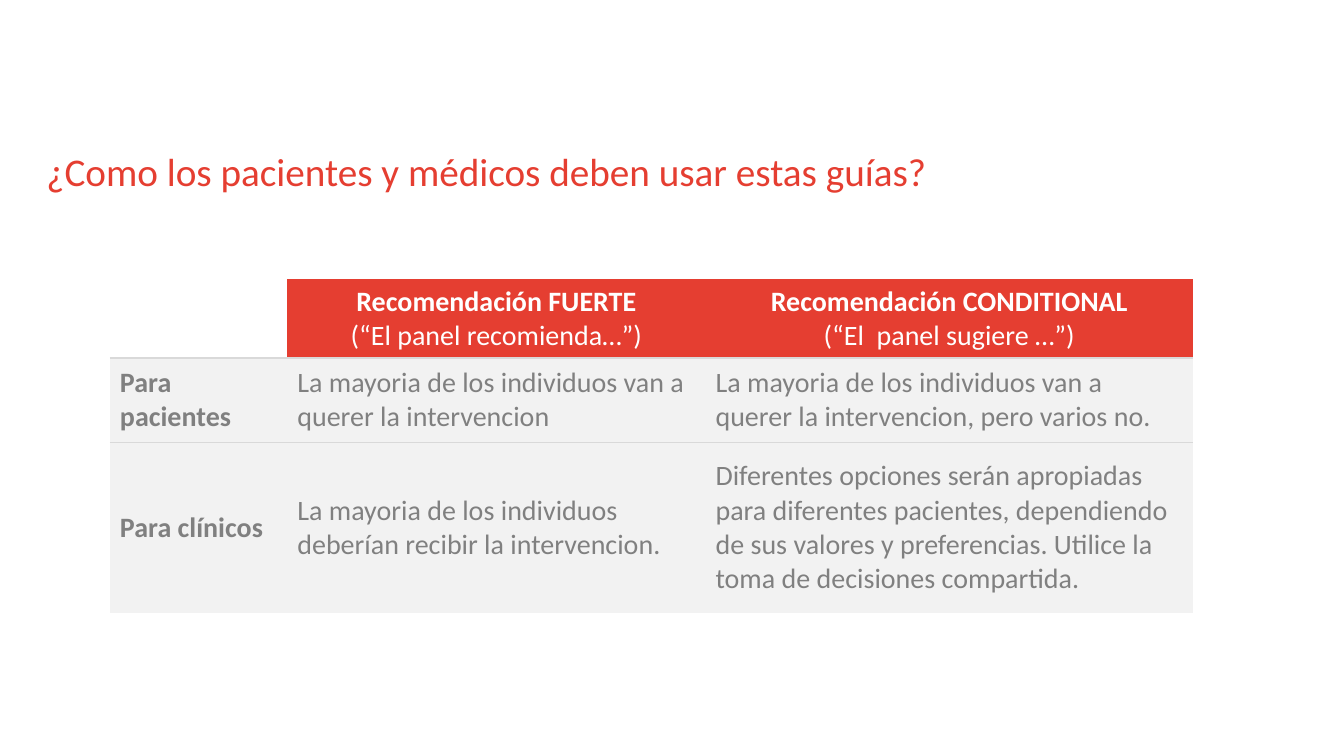
from dataclasses import dataclass
from lxml.etree import SubElement
from pptx import Presentation
from pptx.dml.color import RGBColor
from pptx.enum.text import MSO_ANCHOR, PP_ALIGN
from pptx.oxml.ns import qn
from pptx.util import Cm, Pt


@dataclass(frozen=True)
class Theme:
    face: str = "Calibri"
    red: str = "E53E31"
    white: str = "FFFFFF"
    gray: str = "808080"
    pale: str = "F2F2F2"
    rule: str = "D9D9D9"
    title: int = 28
    body: int = 20


THEME = Theme()
NO_GRID = "{2D5ABB26-0587-4C30-8999-92F81FD0307C}"
TITLE = "¿Como los pacientes y médicos deben usar estas guías?"
COLS = (4.47, 10.54, 12.29)
ROWS = (1.98, 2.13, 4.29)
HEADS = (
    ("Recomendación FUERTE", "(“El panel recomienda…”)"),
    ("Recomendación CONDITIONAL", "(“El  panel sugiere …”)"),
)
BODY = (
    (
        "Para pacientes",
        "La mayoria de los individuos van a querer la intervencion",
        "La mayoria de los individuos van a querer la intervencion, pero varios no.",
    ),
    (
        "Para clínicos",
        "La mayoria de los individuos deberían recibir la intervencion.",
        "Diferentes opciones serán apropiadas para diferentes pacientes, "
        "dependiendo de sus valores y preferencias. Utilice la toma de "
        "decisiones compartida.",
    ),
)


def apply(item, values):
    for name, value in values.items():
        setattr(item, name, value)


def write(par, text, size, color, bold=False, align=PP_ALIGN.LEFT):
    par.alignment = align
    run = par.add_run()
    run.text = text
    apply(run.font, {"name": THEME.face, "size": Pt(size), "bold": bold})
    run.font.color.rgb = RGBColor.from_string(color)


def add_title(slide):
    box = slide.shapes.add_textbox(Cm(1.17), Cm(3.73), Cm(30.48), Cm(1.17))
    frame = box.text_frame
    apply(frame, {
        "word_wrap": True,
        "margin_left": 0, "margin_right": 0,
        "margin_top": 0, "margin_bottom": 0,
        "vertical_anchor": MSO_ANCHOR.MIDDLE,
    })
    write(frame.paragraphs[0], TITLE, THEME.title, THEME.red)


def add_rule(cell, side):
    line = SubElement(cell._tc.get_or_add_tcPr(), qn(f"a:{side}"), w=str(Pt(1)))
    fill = SubElement(line, qn("a:solidFill"))
    SubElement(fill, qn("a:srgbClr"), val=THEME.rule)


def paint(cell, color):
    cell.vertical_anchor = MSO_ANCHOR.MIDDLE
    cell.fill.solid()
    cell.fill.fore_color.rgb = RGBColor.from_string(color)


def fill_head(cell, lines):
    paint(cell, THEME.red)
    frame = cell.text_frame
    for i, text in enumerate(lines):
        par = frame.add_paragraph() if i else frame.paragraphs[0]
        write(par, text, THEME.body, THEME.white, i == 0, PP_ALIGN.CENTER)


def fill_body(cell, text, bold, sides):
    for side in sides:
        add_rule(cell, side)
    paint(cell, THEME.pale)
    write(cell.text_frame.paragraphs[0], text, THEME.body, THEME.gray, bold)


def add_grid(slide):
    frame = slide.shapes.add_table(
        len(ROWS), len(COLS), Cm(2.77), Cm(7.04), Cm(sum(COLS)), Cm(sum(ROWS)))
    table = frame.table
    apply(table, {"first_row": False, "horz_banding": False})
    table._tbl.tblPr.find(qn("a:tableStyleId")).text = NO_GRID
    for col, width in zip(table.columns, COLS):
        col.width = Cm(width)
    for row, height in zip(table.rows, ROWS):
        row.height = Cm(height)
    add_rule(table.cell(0, 0), "lnB")
    table.cell(0, 0).fill.background()
    for c, lines in enumerate(HEADS, 1):
        fill_head(table.cell(0, c), lines)
    for r, texts in enumerate(BODY, 1):
        sides = ("lnT", "lnB") if r < len(BODY) else ("lnT",)
        for c, text in enumerate(texts):
            fill_body(table.cell(r, c), text, c == 0, sides)


def main():
    deck = Presentation()
    apply(deck, {"slide_width": Cm(33.87), "slide_height": Cm(19.05)})
    slide = deck.slides.add_slide(deck.slide_layouts[6])
    add_title(slide)
    add_grid(slide)
    deck.save("out.pptx")


if __name__ == "__main__":
    main()
